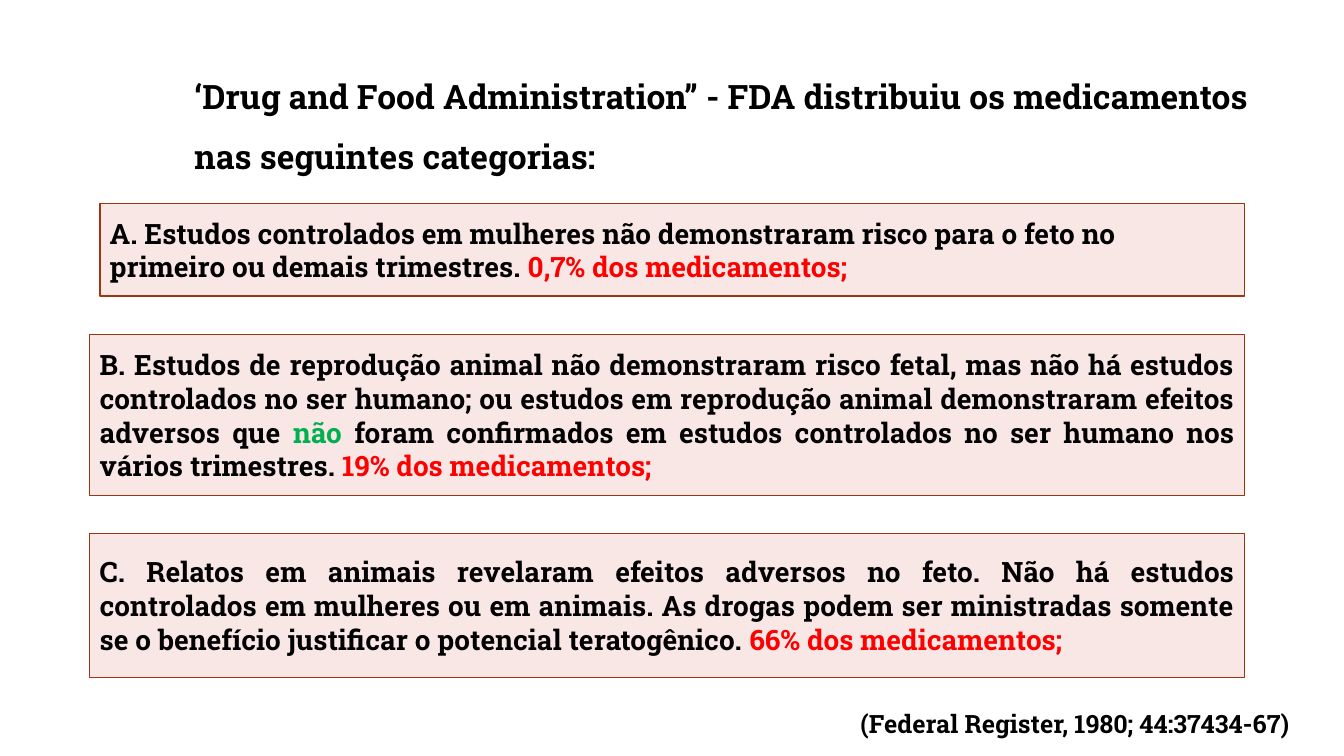
from lxml import etree
from pptx import Presentation
from pptx.dml.color import RGBColor
from pptx.enum.shapes import MSO_SHAPE
from pptx.enum.text import MSO_ANCHOR, PP_ALIGN
from pptx.oxml.ns import qn
from pptx.util import Pt

RECTANGLE = MSO_SHAPE.RECTANGLE
MIDDLE = MSO_ANCHOR.MIDDLE
LEFT, JUSTIFY = PP_ALIGN.LEFT, PP_ALIGN.JUSTIFY

COLORS = {
    "text": "000000",
    "share": "FF0000",
    "stress": "00B050",
    "panel": "E99D93",
    "border": "9C3511",
}
PANEL_RIGHT = 889

CATEGORIES = [
    (71.3, 145.4, 66.2, LEFT, [
        ("A. Estudos controlados em mulheres não demonstraram risco para o feto no "
         "primeiro ou demais trimestres. ", "text"),
        ("0,7% dos medicamentos;", "share"),
    ]),
    (64.1, 239, 115.2, JUSTIFY, [
        ("B. Estudos de reprodução animal não demonstraram risco fetal, mas não há "
         "estudos controlados no ser humano; ou estudos em reprodução animal "
         "demonstraram efeitos adversos que ", "text"),
        ("não", "stress"),
        (" foram confirmados em estudos controlados no ser humano nos vários "
         "trimestres. ", "text"),
        ("19% dos medicamentos;", "share"),
    ]),
    (64.1, 380.9, 103, JUSTIFY, [
        ("C. Relatos em animais revelaram efeitos adversos no feto. Não há estudos "
         "controlados em mulheres ou em animais. As drogas podem ser ministradas "
         "somente se o benefício justificar o potencial teratogênico. ", "text"),
        ("66% dos medicamentos;", "share"),
    ]),
]


class PageBuilder:
    font_name = "Roboto Slab"

    def __init__(self, page):
        self.page = page

    def color(self, name):
        return RGBColor.from_string(COLORS[name])

    def style(self, span, size, color="text"):
        span.font.name = self.font_name
        span.font.size = Pt(size)
        span.font.bold = True
        span.font.color.rgb = self.color(color)

    def label(self, text, left, top, width, height, size, line_spacing=1.0):
        box = self.page.shapes.add_textbox(Pt(left), Pt(top), Pt(width), Pt(height))
        box.text_frame.word_wrap = True
        box.text_frame.text = text
        para = box.text_frame.paragraphs[0]
        para.line_spacing = line_spacing
        self.style(para.runs[0], size)

    def panel(self, left, top, height, align, parts):
        box = self.page.shapes.add_shape(
            RECTANGLE, Pt(left), Pt(top), Pt(PANEL_RIGHT - left), Pt(height))
        box.shadow.inherit = False
        box.fill.solid()
        box.fill.fore_color.rgb = self.color("panel")
        fill_color = box.fill._xPr.find(qn("a:solidFill"))[0]
        etree.SubElement(fill_color, qn("a:alpha")).set("val", "24000")
        box.line.color.rgb = self.color("border")
        box.line.width = Pt(1)
        frame = box.text_frame
        frame.word_wrap = True
        frame.vertical_anchor = MIDDLE
        para = frame.paragraphs[0]
        para.alignment = align
        for text, color in parts:
            span = para.add_run()
            span.text = text
            self.style(span, 20, color)


def main():
    deck = Presentation()
    deck.slide_width, deck.slide_height = Pt(960), Pt(540)
    builder = PageBuilder(deck.slides.add_slide(deck.slide_layouts[6]))
    for category in CATEGORIES:
        builder.panel(*category)
    builder.label(
        "‘Drug and Food Administration” - FDA distribuiu os medicamentos "
        "nas seguintes categorias:", 131.8, 36, 782, 89.3, 24, 1.5)
    builder.label("(Federal Register, 1980; 44:37434-67)", 612.5 - 5, 502.6, 340, 29, 18)
    deck.save("out.pptx")


if __name__ == "__main__":
    main()
